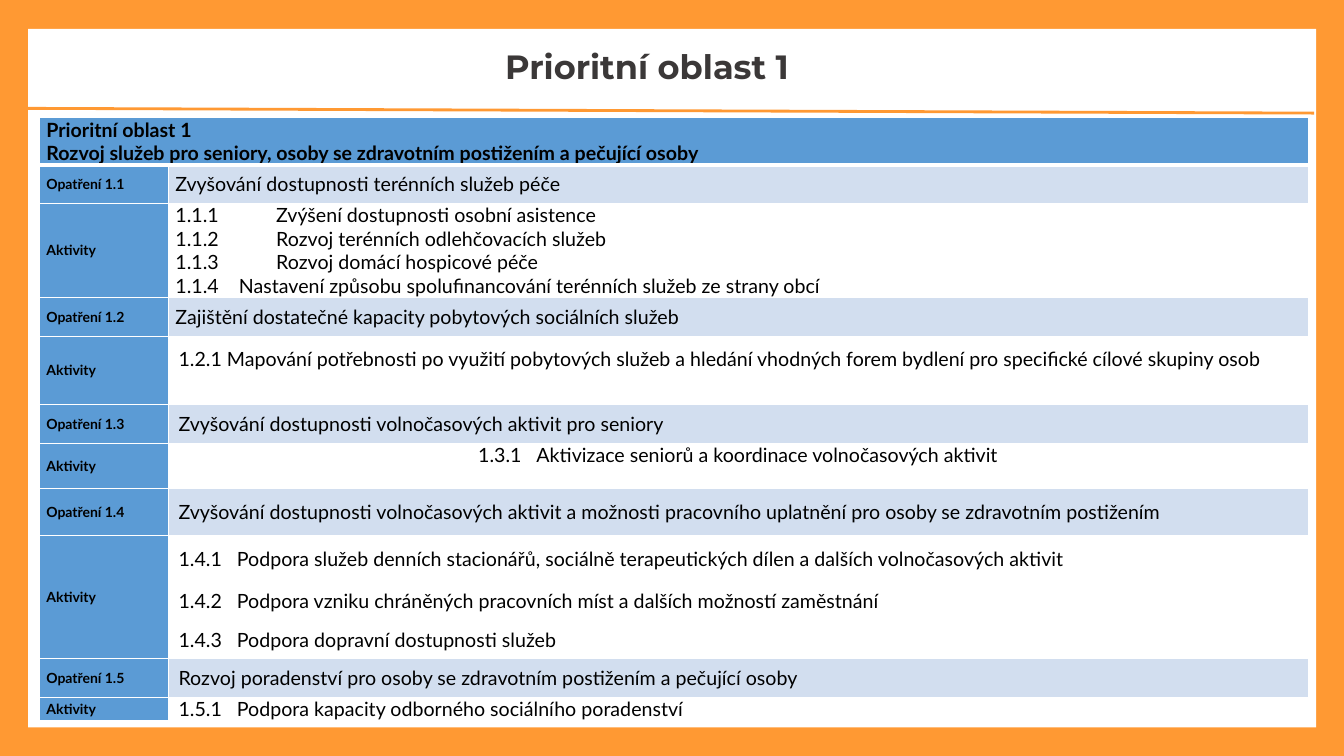
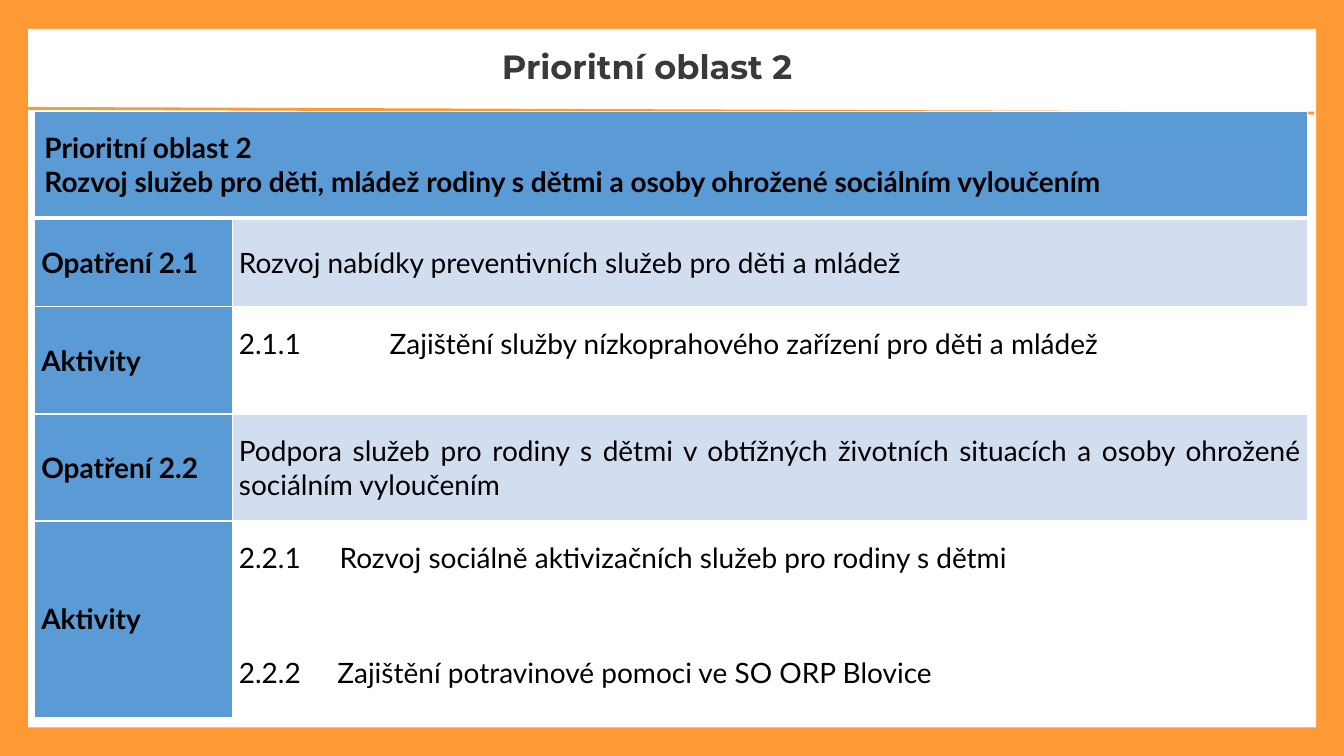
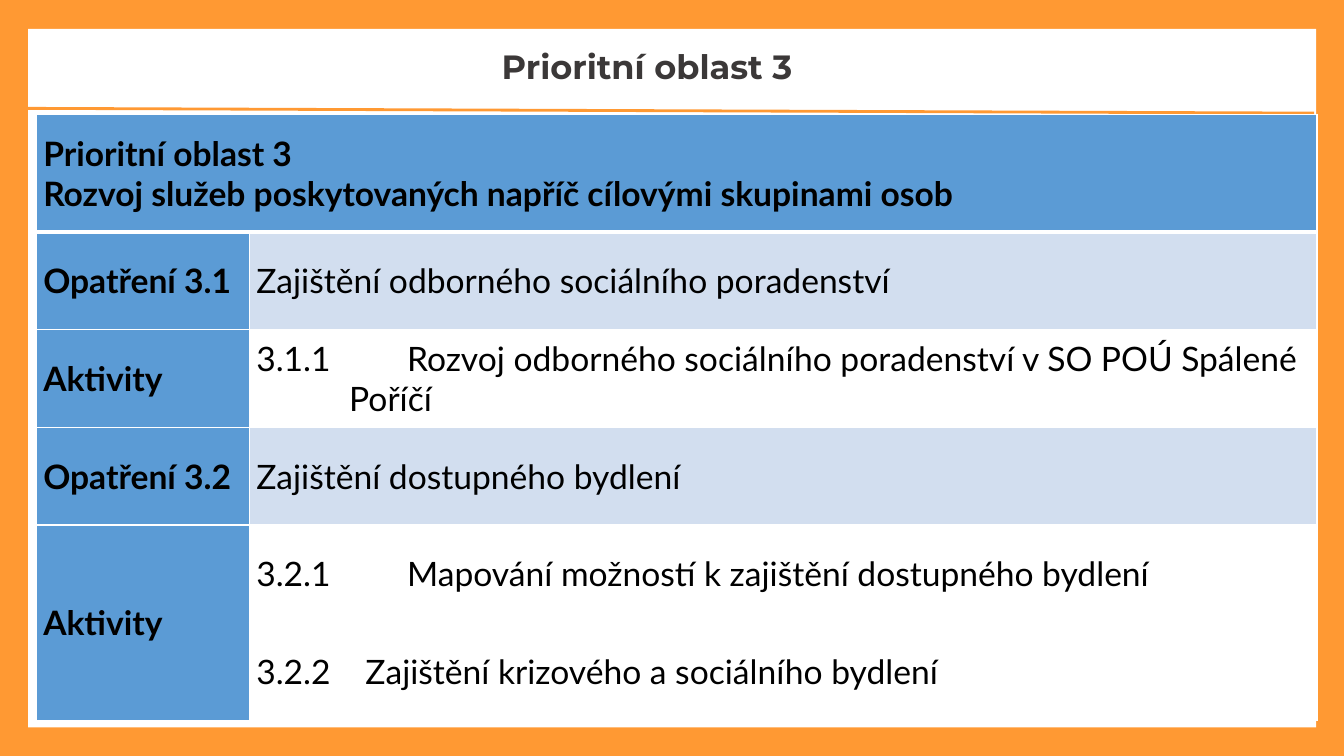
from dataclasses import dataclass

from lxml.etree import SubElement
from pptx import Presentation
from pptx.dml.color import RGBColor
from pptx.enum.shapes import MSO_CONNECTOR as Connector, MSO_SHAPE as Shape
from pptx.enum.text import MSO_ANCHOR as Anchor, MSO_AUTO_SIZE as AutoSize, PP_ALIGN as Align
from pptx.oxml.ns import qn
from pptx.util import Cm, Pt

COLORS = {
    "frame": "FF9933",
    "white": "FFFFFF",
    "title": "3B3838",
    "text": "000000",
    "label": "5B9BD5",
    "measure": "D2DEEF",
}
TITLE_FONT, TABLE_FONT = "Montserrat", "Lato"
SIDE_MARGIN = 0.17
SHIFTED = 0.25  # left margin of the slightly indented cells


@dataclass(frozen=True)
class Row:
    """One table row; an empty label continues the label cell above. Lengths in cm."""
    label: str
    text: str
    height: float
    stops: tuple[float, ...] = ()
    left: float = SIDE_MARGIN
    bottom: float = 0
    anchor: Anchor = Anchor.MIDDLE

    @property
    def is_measure(self) -> bool:
        return self.label.startswith("Opatření")


@dataclass(frozen=True)
class Area:
    """One priority area: its slide title, heading and table. Lengths in cm."""
    title: str
    subject: str
    size: int
    label_size: int
    left: float
    top: float
    columns: tuple[float, float]
    heading_height: float
    rows: tuple[Row, ...]
    heading_left: float = SIDE_MARGIN


AREAS = (
    Area(
        "Prioritní oblast 1",
        "Rozvoj služeb pro seniory, osoby se zdravotním postižením a pečující osoby",
        14, 10, 1, 2.97, (3.25, 28.73), 1.17,
        (
            Row("Opatření 1.1", "Zvyšování dostupnosti terénních služeb péče", 0.97),
            Row("Aktivity",
                "1.1.1\tZvýšení dostupnosti osobní asistence\n"
                "1.1.2\tRozvoj terénních odlehčovacích služeb\n"
                "1.1.3\tRozvoj domácí hospicové péče\n"
                "1.1.4\tNastavení způsobu spolufinancování terénních služeb ze strany obcí",
                2.37, (2.54, 2.54, 2.54, 1.6)),
            Row("Opatření 1.2", "Zajištění dostatečné kapacity pobytových sociálních služeb", 0.97),
            Row("Aktivity",
                "1.2.1 Mapování potřebnosti po využití pobytových služeb a hledání vhodných "
                "forem bydlení pro specifické cílové skupiny osob",
                1.73, left=SHIFTED, bottom=0.6),
            Row("Opatření 1.3", "Zvyšování dostupnosti volnočasových aktivit pro seniory",
                0.97, left=SHIFTED),
            Row("Aktivity", "1.3.1\tAktivizace seniorů a koordinace volnočasových aktivit",
                1.15, (1.47,), left=7.8, anchor=Anchor.TOP),
            Row("Opatření 1.4",
                "Zvyšování dostupnosti volnočasových aktivit a možnosti pracovního uplatnění "
                "pro osoby se zdravotním postižením", 1.17, left=SHIFTED),
            Row("Aktivity",
                "1.4.1\tPodpora služeb denních stacionářů, sociálně terapeutických dílen "
                "a dalších volnočasových aktivit", 1.17, (1.47,), SHIFTED),
            Row("", "1.4.2\tPodpora vzniku chráněných pracovních míst a dalších možností zaměstnání",
                0.97, (1.47,), SHIFTED),
            Row("", "1.4.3\tPodpora dopravní dostupnosti služeb", 0.97, (1.47,), SHIFTED),
            Row("Opatření 1.5",
                "Rozvoj poradenství pro osoby se zdravotním postižením a pečující osoby",
                0.97, left=SHIFTED),
            Row("Aktivity", "1.5.1\tPodpora kapacity odborného sociálního poradenství",
                0.56, (1.47,), SHIFTED),
        ),
    ),
    Area(
        "Prioritní oblast 2",
        "Rozvoj služeb pro děti, mládež rodiny s dětmi a osoby ohrožené sociálním vyloučením",
        20, 20, 0.87, 2.8, (4.98, 27.1), 2.69,
        (
            Row("Opatření 2.1", "Rozvoj nabídky preventivních služeb pro děti a mládež", 2.24),
            Row("Aktivity", "2.1.1\tZajištění služby nízkoprahového zařízení pro děti a mládež",
                2.7, (3.8,), bottom=0.85),
            Row("Opatření 2.2",
                "Podpora služeb pro rodiny s dětmi v obtížných životních situacích "
                "a osoby ohrožené sociálním vyloučením", 2.7),
            Row("Aktivity", "2.2.1\tRozvoj sociálně aktivizačních služeb pro rodiny s dětmi",
                2.7, (2.54,), bottom=0.85),
            Row("", "2.2.2\tZajištění potravinové pomoci ve SO ORP Blovice", 2.24, (2.48,)),
        ),
        SHIFTED,
    ),
    Area(
        "Prioritní oblast 3",
        "Rozvoj služeb poskytovaných napříč cílovými skupinami osob",
        24, 24, 0.92, 2.88, (5.37, 26.9), 2.97,
        (
            Row("Opatření 3.1", "Zajištění odborného sociálního poradenství", 2.46),
            Row("Aktivity",
                "3.1.1\t\tRozvoj odborného sociálního poradenství v SO POÚ Spálené\v\tPoříčí",
                2.46, (2.34, 3.8)),
            Row("Opatření 3.2", "Zajištění dostupného bydlení", 2.46),
            Row("Aktivity", "3.2.1\tMapování možností k zajištění dostupného bydlení", 2.46, (3.8,)),
            Row("", "3.2.2\tZajištění krizového a sociálního bydlení", 2.46, (2.75,)),
        ),
    ),
)


def color(name: str) -> RGBColor:
    return RGBColor.from_string(COLORS[name])


def build_frame(slide, layout) -> None:
    """Put the background, white panel and title rule on the layout all slides use."""
    layout.background.fill.solid()
    layout.background.fill.fore_color.rgb = color("frame")

    panel = slide.shapes.add_shape(Shape.RECTANGLE, Cm(0.71), Cm(0.73), Cm(32.46), Cm(17.6))
    panel.shadow.inherit = False
    panel.fill.solid()
    panel.fill.fore_color.rgb = color("white")
    panel.line.fill.background()

    rule = slide.shapes.add_connector(Connector.STRAIGHT, Cm(0.7), Cm(2.73), Cm(33.12), Cm(2.85))
    rule.line.color.rgb = color("frame")
    rule.line.width = Pt(2)
    SubElement(rule.element.spPr, qn("a:effectLst"))

    for index, shape in enumerate((panel, rule), start=2):
        layout.shapes.element.insert(index, shape.element)


def add_title(slide, text: str) -> None:
    title = slide.shapes.title
    title.left, title.top, title.width, title.height = Cm(7.72), Cm(1), Cm(17.17), Cm(1.29)
    frame = title.text_frame
    frame.text = text
    frame.auto_size = AutoSize.NONE
    frame.vertical_anchor = Anchor.BOTTOM
    paragraph = frame.paragraphs[0]
    paragraph.alignment = Align.CENTER
    font = paragraph.font
    font.name, font.size, font.bold = TITLE_FONT, Pt(24), True
    font.color.rgb = color("title")


def set_borders(cell, top: float = 1, bottom: float = 1) -> None:
    properties = cell._tc.get_or_add_tcPr()
    for side, width in (("L", 1), ("R", 1), ("T", top), ("B", bottom)):
        line = SubElement(properties, qn(f"a:ln{side}"), w=str(Pt(width)))
        fill = SubElement(line, qn("a:solidFill"))
        SubElement(fill, qn("a:srgbClr"), val=COLORS["white"])


def add_tab_stops(paragraph, stops: tuple[float, ...]) -> None:
    tab_list = SubElement(paragraph._p.get_or_add_pPr(), qn("a:tabLst"))
    for stop in stops:
        SubElement(tab_list, qn("a:tab"), pos=str(Cm(stop)), algn="l")


def fill_cell(cell, text: str, size: int, fill: str | None, bold: bool = False,
              left: float = SIDE_MARGIN, bottom: float = 0, anchor: Anchor = Anchor.MIDDLE,
              stops: tuple[float, ...] = ()) -> None:
    """Write and format a cell; several paragraphs take one tab stop each."""
    if fill:
        cell.fill.solid()
        cell.fill.fore_color.rgb = color(fill)
    else:
        cell.fill.background()
    cell.margin_left, cell.margin_right = Cm(left), Cm(SIDE_MARGIN)
    cell.margin_top, cell.margin_bottom = 0, Cm(bottom)
    cell.vertical_anchor = anchor
    cell.text_frame.text = text
    paragraphs = cell.text_frame.paragraphs
    for index, paragraph in enumerate(paragraphs):
        paragraph.alignment = Align.LEFT if stops else Align.JUSTIFY
        if stops:
            add_tab_stops(paragraph, stops if len(paragraphs) == 1 else (stops[index],))
        font = paragraph.font
        font.name, font.size, font.bold = TABLE_FONT, Pt(size), bold
        font.color.rgb = color("text")


def add_area_table(slide, area: Area) -> None:
    heights = [area.heading_height] + [row.height for row in area.rows]
    table = slide.shapes.add_table(
        len(heights), 2, Cm(area.left), Cm(area.top),
        Cm(sum(area.columns)), Cm(sum(heights))).table
    table.first_row = table.horz_banding = False
    for column, width in zip(table.columns, area.columns):
        column.width = Cm(width)
    for table_row, height in zip(table.rows, heights):
        table_row.height = Cm(height)

    for column in range(2):
        set_borders(table.cell(0, column), bottom=3)
    heading = table.cell(0, 0)
    heading.merge(table.cell(0, 1))
    fill_cell(heading, f"{area.title}\n{area.subject}", area.size, "label", True, area.heading_left)

    label_cell = heading
    for index, row in enumerate(area.rows, start=1):
        for column in range(2):
            set_borders(table.cell(index, column), top=3 if index == 1 else 1)
        fill_cell(table.cell(index, 0), row.label, area.label_size, "label", True)
        fill_cell(table.cell(index, 1), row.text, area.size,
                  "measure" if row.is_measure else None, left=row.left,
                  bottom=row.bottom, anchor=row.anchor, stops=row.stops)
        if row.label:
            label_cell = table.cell(index, 0)
        if index == len(area.rows) or area.rows[index].label:
            if not row.label:
                label_cell.merge(table.cell(index, 0))


def main() -> None:
    presentation = Presentation()
    presentation.slide_width, presentation.slide_height = Cm(33.87), Cm(19.05)
    layout = presentation.slide_layouts.get_by_name("Title Only")
    for number, area in enumerate(AREAS):
        slide = presentation.slides.add_slide(layout)
        if number == 0:
            build_frame(slide, layout)
        add_title(slide, area.title)
        add_area_table(slide, area)
    presentation.save("out.pptx")


if __name__ == "__main__":
    main()
